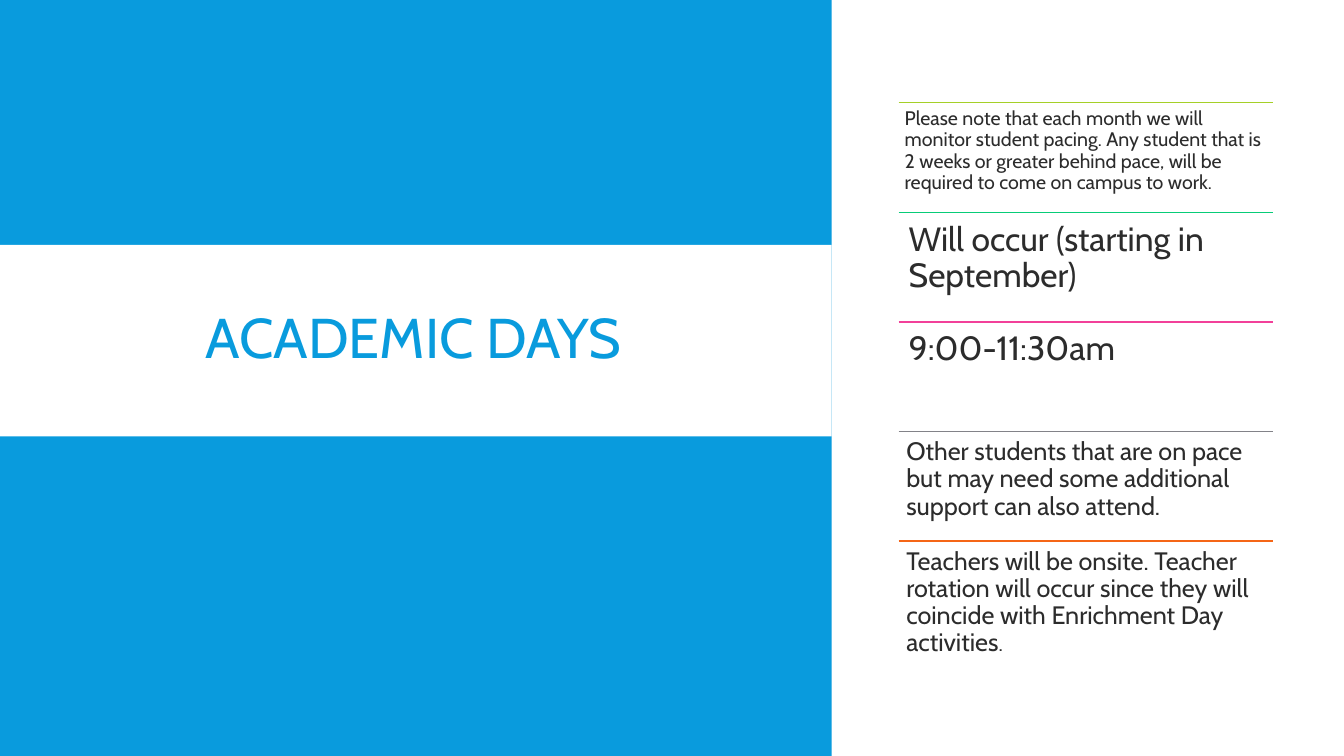
from lxml import etree
from pptx import Presentation
from pptx.dml.color import RGBColor
from pptx.enum.shapes import MSO_CONNECTOR, MSO_SHAPE
from pptx.enum.text import MSO_ANCHOR, MSO_AUTO_SIZE, PP_ALIGN
from pptx.oxml.ns import qn
from pptx.util import Cm, Pt

RECTANGLE = MSO_SHAPE.RECTANGLE
STRAIGHT = MSO_CONNECTOR.STRAIGHT
CENTER = PP_ALIGN.CENTER
MIDDLE = MSO_ANCHOR.MIDDLE
TOP = MSO_ANCHOR.TOP
NO_AUTOFIT = MSO_AUTO_SIZE.NONE

FONT = "Cabin"
BLUE = "099BDD"
WHITE = "FFFFFF"
DARK = "2C2C2C"

SLIDE_WIDTH = 33.87
SLIDE_HEIGHT = 19.05
PANEL_WIDTH = 20.96
NOTE_LEFT = 22.65
NOTE_TOP = 2.59
NOTE_WIDTH = 9.43
NOTE_HEIGHT = 2.76

NOTES = [
    ("A5D028", 0.15, [("Please note that each month we will monitor student pacing. "
                       "Any student that is 2 weeks or greater behind pace, will be "
                       "required to come on campus to work.", 14)]),
    ("08CC78", 0.25, [("Will occur (starting in September)", 24)]),
    ("F24099", 0.25, [("9:00-11:30am", 24)]),
    ("828288", 0.19, [("Other students that are on pace but may need some additional "
                       "support can also attend.", 18)]),
    ("F56617", 0.19, [("Teachers will be onsite. Teacher rotation will occur since they "
                       "will coincide with Enrichment Day activities", 18), (".", 15)]),
]


def set_color(color_format, value):
    """Set a color from a hex string."""
    color_format.rgb = RGBColor.from_string(value)


def add_panel(slide, top, height, color):
    """Add a borderless rectangle across the left side."""
    panel = slide.shapes.add_shape(RECTANGLE, 0, Cm(top), Cm(PANEL_WIDTH), Cm(height))
    panel.shadow.inherit = False
    panel.fill.solid()
    set_color(panel.fill.fore_color, color)
    panel.line.fill.background()


def add_run(paragraph, text, size, color):
    """Add a formatted run to a paragraph."""
    run = paragraph.add_run()
    run.text = text
    run.font.name = FONT
    run.font.size = Pt(size)
    set_color(run.font.color, color)


def prepare_frame(frame, anchor, inset):
    """Set wrapping, anchor and equal insets of a text frame."""
    frame.word_wrap = True
    frame.auto_size = NO_AUTOFIT
    frame.vertical_anchor = anchor
    frame.margin_left = frame.margin_right = Cm(inset)
    frame.margin_top = frame.margin_bottom = Cm(inset)


def add_title(slide, text):
    """Fill the title placeholder and bring it in front of the panels."""
    title = slide.shapes.title
    title.left, title.top = Cm(2.08), Cm(6.5)
    title.width, title.height = Cm(16.69), Cm(4.19)
    prepare_frame(title.text_frame, MIDDLE, 0.2)
    paragraph = title.text_frame.paragraphs[0]
    paragraph.alignment = CENTER
    paragraph.line_spacing = 0.85
    add_run(paragraph, text, 40, BLUE)
    slide.shapes.element.append(title.element)


def add_rule(slide, top, color):
    """Add the colored line above a note."""
    rule = slide.shapes.add_connector(
        STRAIGHT, Cm(NOTE_LEFT), Cm(top), Cm(NOTE_LEFT + NOTE_WIDTH), Cm(top))
    rule.line.width = Pt(1)
    set_color(rule.line.color, color)
    etree.SubElement(rule.element.spPr, qn("a:effectLst"))


def add_note(slide, top, inset, runs):
    """Add the text of one note."""
    box = slide.shapes.add_textbox(
        Cm(NOTE_LEFT), Cm(top), Cm(NOTE_WIDTH), Cm(NOTE_HEIGHT))
    prepare_frame(box.text_frame, TOP, inset)
    paragraph = box.text_frame.paragraphs[0]
    paragraph.line_spacing = 0.9
    for text, size in runs:
        add_run(paragraph, text, size, DARK)


def main():
    """Build the slide and save it."""
    presentation = Presentation()
    presentation.slide_width = Cm(SLIDE_WIDTH)
    presentation.slide_height = Cm(SLIDE_HEIGHT)
    slide = presentation.slides.add_slide(presentation.slide_layouts[5])
    slide.background.fill.solid()
    set_color(slide.background.fill.fore_color, WHITE)
    add_panel(slide, 0, SLIDE_HEIGHT, BLUE)
    add_panel(slide, 6.17, 4.83, WHITE)
    add_title(slide, "ACADEMIC DAYS")
    for index, (color, inset, runs) in enumerate(NOTES):
        top = NOTE_TOP + index * NOTE_HEIGHT
        add_rule(slide, top, color)
        add_note(slide, top, inset, runs)
    presentation.save("out.pptx")


if __name__ == "__main__":
    main()
